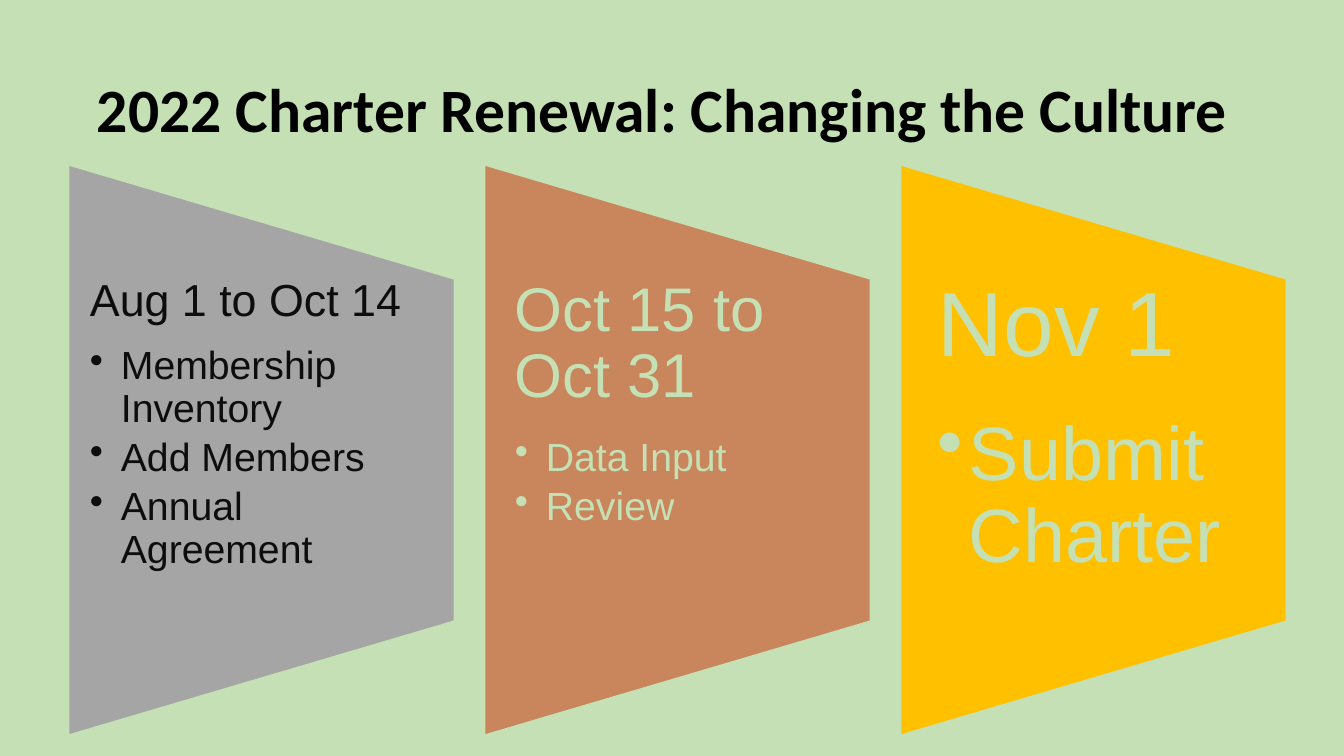
from dataclasses import dataclass

from pptx import Presentation
from pptx.dml.color import RGBColor
from pptx.enum.shapes import MSO_SHAPE as Shape
from pptx.enum.text import MSO_ANCHOR as Anchor, PP_ALIGN as Align
from pptx.oxml.xmlchemy import OxmlElement
from pptx.util import Emu, Pt

WIDTH, HEIGHT = 1344, 756
PANEL_LEFT, PANEL_TOP, PANEL_STEP = 68, 164, 416
PANEL_WIDTH, PANEL_HEIGHT = 387, 572
TEXT_TOP, TEXT_HEIGHT = 278, 344

# heading, heading size, bullets, bullet size, side inset, fill, ink
STAGES = [
    ("Aug 1 to Oct 14", 32, ["Membership Inventory", "Add Members", "Annual Agreement"],
     28, 22, "gray", "dark"),
    ("Oct 15 to Oct 31", 44, ["Data Input", "Review"], 28, 31, "clay", "green"),
    ("Nov 1", 65, ["Submit Charter"], 54, 38, "gold", "green"),
]


@dataclass(frozen=True)
class Theme:
    green: str = "C5E0B4"
    black: str = "000000"
    dark: str = "0D0D0D"
    gray: str = "A5A5A5"
    clay: str = "C9855C"
    gold: str = "FFC000"
    title_font: str = "Calibri"
    body_font: str = "Arial"
    title_size: int = 44
    outline: int = 2
    line_spacing: float = 0.9
    heading_gap: float = 0.43
    bullet_gap: float = 0.18


def px(length):
    return Emu(round(length * 914400 / 100.8))


def color(value):
    return RGBColor.from_string(value)


class SlideBuilder:
    def __init__(self, slide, theme):
        self.slide = slide
        self.theme = theme

    def background(self):
        fill = self.slide.background.fill
        fill.solid()
        fill.fore_color.rgb = color(self.theme.green)

    def text_frame(self, left, top, width, height, inset_x, inset_y, anchor):
        box = self.slide.shapes.add_textbox(px(left), px(top), px(width), px(height))
        frame = box.text_frame
        frame.word_wrap = True
        frame.vertical_anchor = anchor
        frame.margin_left = frame.margin_right = px(inset_x)
        frame.margin_top = frame.margin_bottom = px(inset_y)
        return frame

    def set_text(self, paragraph, text, size, ink, font_name, gap=0, bold=False, bullet=False):
        """Fill one paragraph; gap is the space after, as a share of the type size."""
        paragraph.text = text
        paragraph.alignment = Align.LEFT
        paragraph.line_spacing = self.theme.line_spacing
        paragraph.space_after = Pt(round(size * gap))
        if bullet:
            properties = paragraph._p.get_or_add_pPr()
            properties.set("marL", str(px(31)))
            properties.set("indent", str(-px(31)))
            mark = OxmlElement("a:buChar")
            mark.set("char", "•")
            properties.append(mark)
        font = paragraph.font
        font.name, font.size, font.bold = font_name, Pt(size), bold
        font.color.rgb = color(ink)

    def title(self, text):
        theme = self.theme
        frame = self.text_frame(92, 40, 1159, 146, 5, 5, Anchor.MIDDLE)
        self.set_text(frame.paragraphs[0], text, theme.title_size, theme.black,
                      theme.title_font, bold=True)

    def panel(self, left, fill):
        """Draw a trapezoid turned so that its wide side faces left."""
        shift = (PANEL_HEIGHT - PANEL_WIDTH) / 2
        shape = self.slide.shapes.add_shape(
            Shape.FLOWCHART_MANUAL_OPERATION, px(left - shift), px(PANEL_TOP + shift),
            px(PANEL_HEIGHT), px(PANEL_WIDTH))
        shape.rotation = 270
        shape.shadow.inherit = False
        shape.fill.solid()
        shape.fill.fore_color.rgb = color(fill)
        shape.line.color.rgb = color(self.theme.green)
        shape.line.width = Pt(self.theme.outline)

    def stage(self, left, heading, heading_size, bullets, bullet_size, inset, fill, ink):
        theme = self.theme
        fill, ink = getattr(theme, fill), getattr(theme, ink)
        self.panel(left, fill)
        frame = self.text_frame(left, TEXT_TOP, PANEL_WIDTH, TEXT_HEIGHT, inset, 0, Anchor.TOP)
        self.set_text(frame.paragraphs[0], heading, heading_size, ink, theme.body_font,
                      theme.heading_gap)
        for bullet in bullets:
            self.set_text(frame.add_paragraph(), bullet, bullet_size, ink, theme.body_font,
                          theme.bullet_gap, bullet=True)


def main():
    presentation = Presentation()
    presentation.slide_width, presentation.slide_height = px(WIDTH), px(HEIGHT)
    slide = presentation.slides.add_slide(presentation.slide_layouts[6])
    builder = SlideBuilder(slide, Theme())
    builder.background()
    builder.title("2022 Charter Renewal: Changing the Culture")
    for column, stage in enumerate(STAGES):
        builder.stage(PANEL_LEFT + column * PANEL_STEP, *stage)
    presentation.save("out.pptx")


if __name__ == "__main__":
    main()
